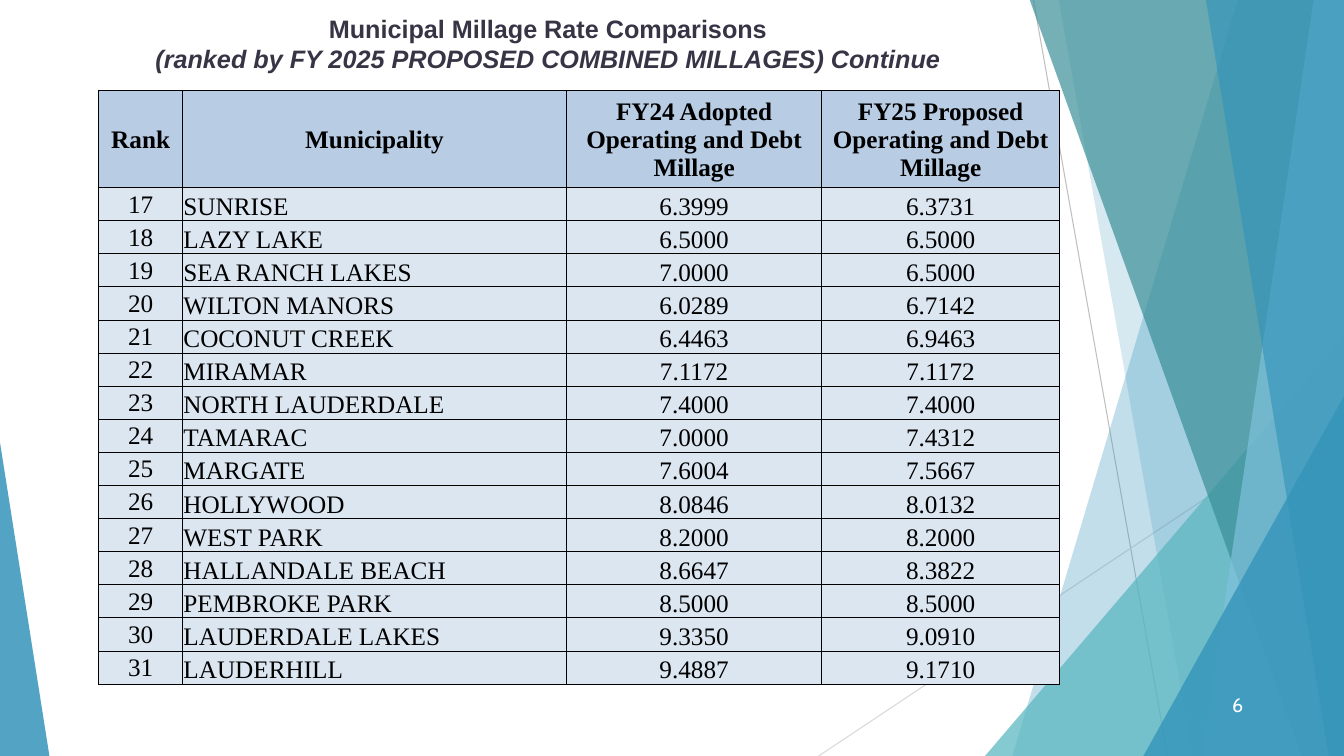
"""Build the municipal millage rate comparison slide."""
import dataclasses
import typing

import lxml.etree
import pptx
import pptx.dml.color
import pptx.enum.shapes
import pptx.enum.text
import pptx.oxml.ns
import pptx.util

Inches = pptx.util.Inches
Align = pptx.enum.text.PP_ALIGN
Anchor = pptx.enum.text.MSO_ANCHOR
qn = pptx.oxml.ns.qn


@dataclasses.dataclass(frozen=True)
class Theme:
    blue: str = "3494BA"
    aqua: str = "58B6C0"
    teal: str = "3A8F98"
    sky: str = "7FC1DB"
    ink: str = "373545"
    black: str = "000000"
    white: str = "FFFFFF"
    header: str = "B8CCE4"
    body: str = "DCE6F1"
    title_font: str = "Arial"
    table_font: str = "Times New Roman"
    number_font: str = "Cabin"
    text_size: int = 18
    number_size: int = 14
    border_width: float = 0.5
    ray_width: float = 0.75


class Ray(typing.NamedTuple):
    start: tuple[float, float]
    end: tuple[float, float]
    color: str


class Band(typing.NamedTuple):
    top_left: float
    bottom_left: float
    color: str
    opacity: int


class Wedge(typing.NamedTuple):
    left: float
    top: float
    width: float
    apex: float
    color: str
    opacity: int


class City(typing.NamedTuple):
    name: str
    adopted: str
    proposed: str


THEME = Theme()
WIDTH, HEIGHT = 13.33, 7.5
BAND_TOP = -0.01
RAYS = [
    Ray((10.25, 0), (11.58, HEIGHT), "BFBFBF"),
    Ray((WIDTH, 4.03), (8.12, HEIGHT), "D9D9D9"),
]
FACETS: list[Band | Wedge] = [
    Band(12.28, 10.04, THEME.blue, 30),
    Band(10.5, 11.83, THEME.blue, 20),
    Wedge(9.77, 3.33, 3.56, 1, THEME.aqua, 72),
    Band(10.21, 12.91, THEME.teal, 70),
    Band(13.03, 11.92, THEME.sky, 70),
    Band(11.96, 13.18, THEME.blue, 65),
    Wedge(11.34, 3.93, 1.99, 1, THEME.blue, 80),
    Wedge(0, 4.39, 0.49, 0, THEME.blue, 85),
]
HEADINGS = ["Rank", "Municipality", "FY24 Adopted Operating and Debt Millage",
            "FY25 Proposed Operating and Debt Millage"]
COLUMN_WIDTHS = [0.83, 3.81, 2.53, 2.36]
TABLE_HEIGHT, HEADER_HEIGHT = 5.89, 0.96
FIRST_RANK = 17
CITIES = [
    City("SUNRISE", "6.3999", "6.3731"),
    City("LAZY LAKE", "6.5000", "6.5000"),
    City("SEA RANCH LAKES", "7.0000", "6.5000"),
    City("WILTON MANORS", "6.0289", "6.7142"),
    City("COCONUT CREEK", "6.4463", "6.9463"),
    City("MIRAMAR", "7.1172", "7.1172"),
    City("NORTH LAUDERDALE", "7.4000", "7.4000"),
    City("TAMARAC", "7.0000", "7.4312"),
    City("MARGATE", "7.6004", "7.5667"),
    City("HOLLYWOOD", "8.0846", "8.0132"),
    City("WEST PARK", "8.2000", "8.2000"),
    City("HALLANDALE BEACH", "8.6647", "8.3822"),
    City("PEMBROKE PARK", "8.5000", "8.5000"),
    City("LAUDERDALE LAKES", "9.3350", "9.0910"),
    City("LAUDERHILL", "9.4887", "9.1710"),
]


def rgb(color: str) -> pptx.dml.color.RGBColor:
    return pptx.dml.color.RGBColor.from_string(color)


def write(para, text: str, *, font: str, color: str, size: int = THEME.text_size,
          bold: bool = False, italic: bool = False, align=Align.CENTER) -> None:
    para.alignment = align
    span = para.add_run()
    span.text = text
    span.font.name = font
    span.font.size = pptx.util.Pt(size)
    span.font.bold = bold
    span.font.italic = italic
    span.font.color.rgb = rgb(color)


def add_box(page, left: float, top: float, width: float, height: float):
    box = page.shapes.add_textbox(*map(Inches, (left, top, width, height)))
    box.text_frame.word_wrap = True
    return box.text_frame


def draw_ray(page, ray: Ray) -> None:
    line = page.shapes.add_connector(pptx.enum.shapes.MSO_CONNECTOR.STRAIGHT,
                                     *map(Inches, ray.start + ray.end))
    line.line.color.rgb = rgb(ray.color)
    line.line.width = pptx.util.Pt(THEME.ray_width)
    lxml.etree.SubElement(line._element.spPr, qn("a:effectLst"))


def draw_facet(page, facet: Band | Wedge) -> None:
    if isinstance(facet, Band):
        corners = [(facet.top_left, BAND_TOP), (WIDTH, BAND_TOP),
                   (WIDTH, HEIGHT), (facet.bottom_left, HEIGHT)]
        points = [(Inches(x), Inches(y)) for x, y in corners]
        builder = page.shapes.build_freeform(*points[0])
        builder.add_line_segments(points[1:], close=True)
        shape = builder.convert_to_shape()
    else:
        shape = page.shapes.add_shape(
            pptx.enum.shapes.MSO_SHAPE.ISOSCELES_TRIANGLE,
            *map(Inches, (facet.left, facet.top, facet.width, HEIGHT - facet.top)))
        shape.adjustments[0] = facet.apex
    shape.shadow.inherit = False
    shape.line.fill.background()
    shape.fill.solid()
    shape.fill.fore_color.rgb = rgb(facet.color)
    tint = shape._element.spPr.find(qn("a:solidFill"))[0]
    lxml.etree.SubElement(tint, qn("a:alpha"), val=str(facet.opacity * 1000))


def add_borders(cell) -> None:
    properties = cell._tc.get_or_add_tcPr()
    for index, side in enumerate(("a:lnL", "a:lnR", "a:lnT", "a:lnB")):
        edge = lxml.etree.Element(qn(side), w=str(pptx.util.Pt(THEME.border_width)))
        fill = lxml.etree.SubElement(edge, qn("a:solidFill"))
        lxml.etree.SubElement(fill, qn("a:srgbClr"), val=THEME.black)
        properties.insert(index, edge)


def draw_table(page) -> None:
    rows = [HEADINGS] + [[str(rank), *city] for rank, city in enumerate(CITIES, FIRST_RANK)]
    table = page.shapes.add_table(
        len(rows), len(HEADINGS), Inches(0.98), Inches(0.9),
        Inches(sum(COLUMN_WIDTHS)), Inches(TABLE_HEIGHT)).table
    table.horz_banding = False
    for column, width in zip(table.columns, COLUMN_WIDTHS):
        column.width = Inches(width)
    for r, values in enumerate(rows):
        heading = r == 0
        table.rows[r].height = Inches(
            HEADER_HEIGHT if heading else (TABLE_HEIGHT - HEADER_HEIGHT) / len(CITIES))
        for c, text in enumerate(values):
            cell = table.cell(r, c)
            cell.margin_left = cell.margin_right = cell.margin_top = Inches(0.01)
            cell.margin_bottom = 0
            cell.vertical_anchor = Anchor.MIDDLE if heading or c == 0 else Anchor.BOTTOM
            cell.fill.solid()
            cell.fill.fore_color.rgb = rgb(THEME.header if heading else THEME.body)
            add_borders(cell)
            write(cell.text_frame.paragraphs[0], text, font=THEME.table_font,
                  color=THEME.black, bold=heading,
                  align=Align.LEFT if c == 1 and not heading else Align.CENTER)


def main() -> None:
    deck = pptx.Presentation()
    deck.slide_width, deck.slide_height = Inches(WIDTH), Inches(HEIGHT)
    page = deck.slides.add_slide(deck.slide_layouts[6])
    for ray in RAYS:
        draw_ray(page, ray)
    for facet in FACETS:
        draw_facet(page, facet)
    title = add_box(page, 1.14, 0.08, 8.59, 0.71)
    title_format = {"font": THEME.title_font, "color": THEME.ink, "bold": True}
    write(title.paragraphs[0], "Municipal Millage Rate Comparisons", **title_format)
    write(title.add_paragraph(), "(ranked by FY 2025 PROPOSED COMBINED MILLAGES) Continue",
          italic=True, **title_format)
    number = add_box(page, 11.68, 6.79, 0.75, 0.4)
    number.vertical_anchor = Anchor.MIDDLE
    write(number.paragraphs[0], "6", font=THEME.number_font, color=THEME.white,
          size=THEME.number_size, align=Align.RIGHT)
    draw_table(page)
    deck.save("out.pptx")


if __name__ == "__main__":
    main()
